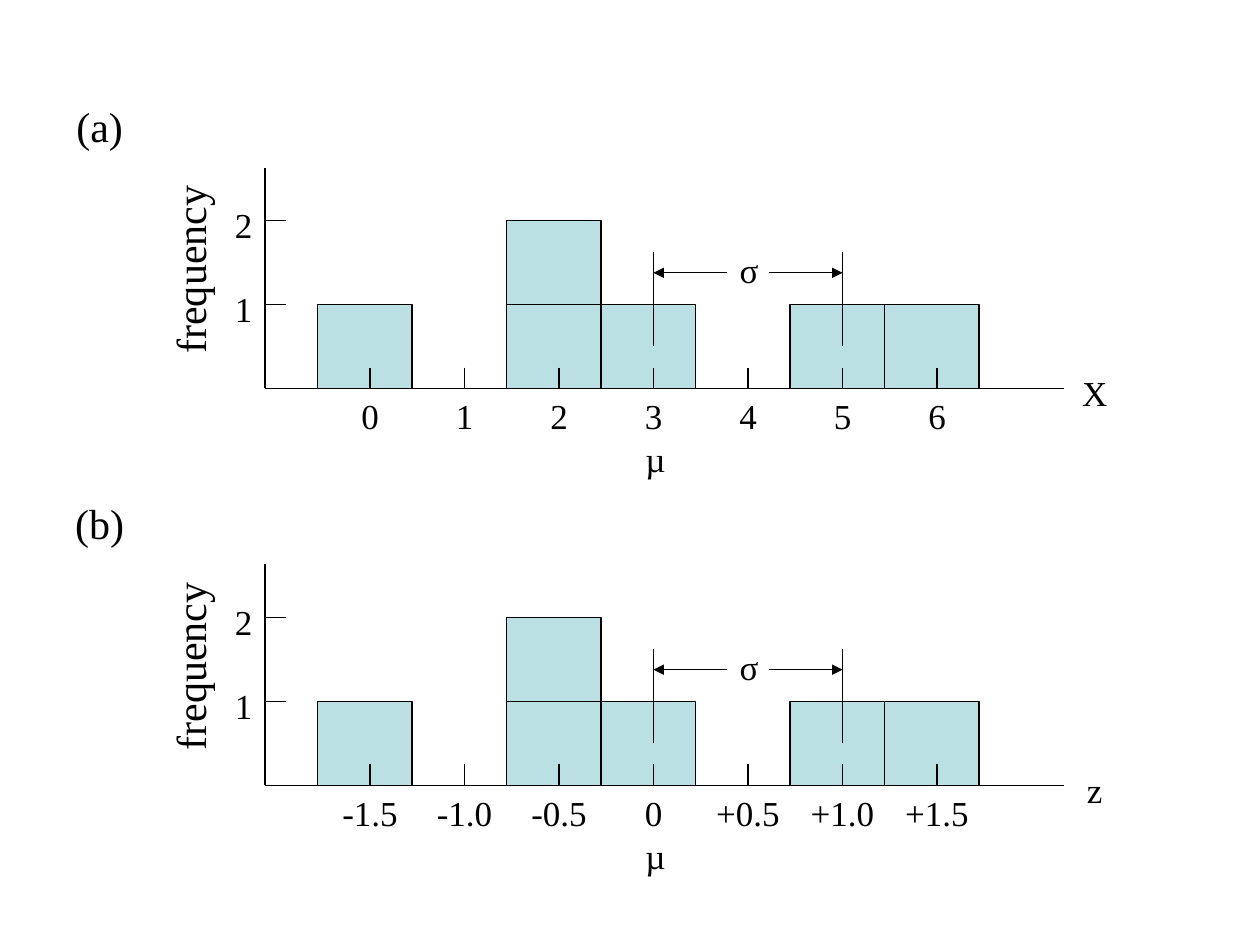
from pptx import Presentation
from pptx.dml.color import RGBColor
from pptx.enum import shapes, text
from pptx.oxml.ns import qn
from pptx.util import Cm, Pt
from lxml import etree

BLACK = "000000"
BAR = "BBE0E3"
FREQUENCIES = [1, 0, 2, 1, 0, 1, 1]
MEAN, SIGMA_END = 3, 5
UNIT_W, UNIT_H = 11.43 / 6, 1.69
TICK = 0.42
LABEL_W = {"-": 1.7, "+": 1.85}


def color(value):
    return RGBColor.from_string(value)


def add_line(slide, x1, y1, x2, y2, arrow=False):
    sp = slide.shapes.add_connector(
        shapes.MSO_CONNECTOR.STRAIGHT, Cm(x1), Cm(y1), Cm(x2), Cm(y2))
    sp.line.color.rgb = color(BLACK)
    sp.line.width = Pt(0.75)
    props = sp._element.spPr
    if arrow:
        etree.SubElement(props.find(qn("a:ln")), qn("a:tailEnd"), type="triangle")
    etree.SubElement(props, qn("a:effectLst"))


def add_bar(slide, x, y):
    sp = slide.shapes.add_shape(
        shapes.MSO_SHAPE.RECTANGLE, Cm(x), Cm(y), Cm(UNIT_W), Cm(UNIT_H))
    sp.shadow.inherit = False
    sp.fill.solid()
    sp.fill.fore_color.rgb = color(BAR)
    sp.line.color.rgb = color(BLACK)
    sp.line.width = Pt(0.75)


def add_label(slide, words, center, top, width=0.88, size=20, rotation=0):
    height = 1.11 if size == 20 else 1.27
    sp = slide.shapes.add_textbox(
        Cm(center - width / 2), Cm(top), Cm(width), Cm(height))
    sp.rotation = rotation
    tf = sp.text_frame
    tf.word_wrap = False
    tf.auto_size = text.MSO_AUTO_SIZE.SHAPE_TO_FIT_TEXT
    p = tf.paragraphs[0]
    p.text = words
    p.alignment = text.PP_ALIGN.CENTER
    p.font.name = "Times New Roman"
    p.font.size = Pt(size)
    p.font.color.rgb = color(BLACK)


def add_axes(slide, x, base, ticks):
    add_line(slide, x, base - 4.45, x, base)
    add_line(slide, x, base, x + 16.1, base)
    for tick in ticks:
        add_line(slide, tick, base - TICK, tick, base)
    for count in (1, 2):
        y = base - count * UNIT_H
        add_line(slide, x, y, x + TICK, y)
        add_label(slide, str(count), x - 0.43, y - 0.47)


def add_sigma(slide, start, end, base):
    y = base - 2.33
    middle = (start + end) / 2
    for x, side in ((start, -1), (end, 1)):
        add_line(slide, x, base - 0.85, x, base - 2.75)
        add_line(slide, middle + side * TICK, y, x, y, arrow=True)
    add_label(slide, "σ", middle + 0.02, y - 0.61, 0.96)


def add_histogram(slide, left, top, title, axis_name, labels):
    axis_x, base = left + 4.07, top + 5.92
    ticks = [left + 6.19 + i * UNIT_W for i in range(len(labels))]
    for tick, count in zip(ticks, FREQUENCIES):
        for level in range(1, count + 1):
            add_bar(slide, tick - 1.06, base - level * UNIT_H)
    add_axes(slide, axis_x, base, ticks)
    for tick, words in zip(ticks, labels):
        add_label(slide, words, tick, base, LABEL_W.get(words[0], 0.88))
    add_label(slide, "µ", ticks[MEAN] + 0.04, base + 0.86, 0.99)
    add_sigma(slide, ticks[MEAN], ticks[SIGMA_END], base)
    add_label(slide, axis_name, left + 20.8, base - 0.46, 1.02)
    add_label(slide, "frequency", left + 2.55, top + 2.89, 4, 24, 270)
    add_label(slide, title, left + 0.74, top, 1.7, 24)


def main():
    prs = Presentation()
    prs.slide_width, prs.slide_height = Cm(25.4), Cm(19.05)
    slide = prs.slides.add_slide(prs.slide_layouts[6])
    panels = [
        ("(a)", "X", ["0", "1", "2", "3", "4", "5", "6"]),
        ("(b)", "z", ["-1.5", "-1.0", "-0.5", "0", "+0.5", "+1.0", "+1.5"]),
    ]
    for i, (title, axis_name, labels) in enumerate(panels):
        add_histogram(slide, 1.27, 1.91 + 8 * i, title, axis_name, labels)
    prs.save("out.pptx")


if __name__ == "__main__":
    main()
